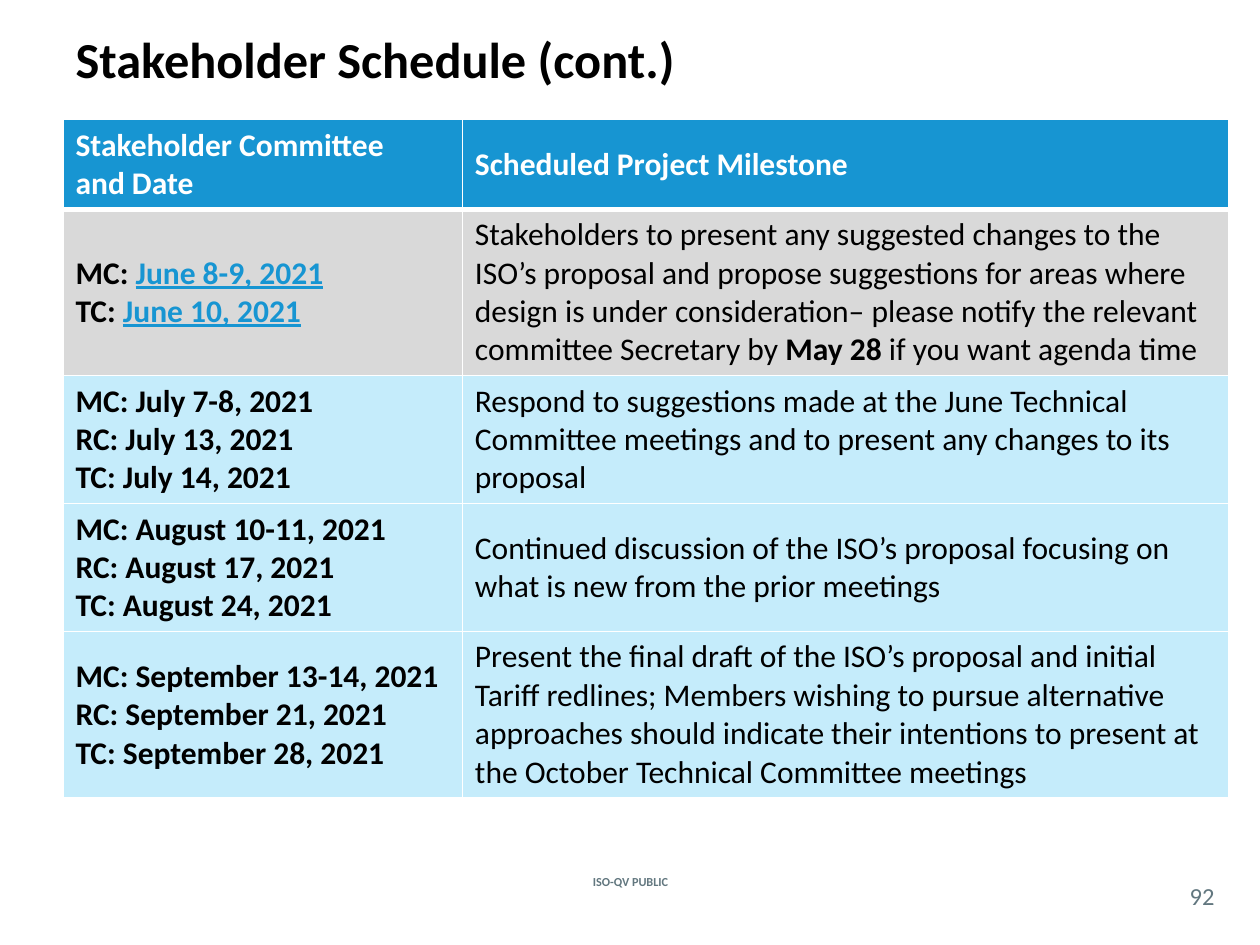
from lxml import etree
from pptx import Presentation
from pptx.dml.color import RGBColor
from pptx.enum import text as t
from pptx.oxml.ns import qn
from pptx.util import Inches, Pt

BLUE, GREY, PALE, SLATE = "1795D2", "D9D9D9", "C5ECFB", "62777F"
WHITE, BLACK = "FFFFFF", "000000"


def style(font, size, color, bold=False):
    font.name, font.size, font.bold = "Calibri", Pt(size), bold
    font.color.rgb = RGBColor.from_string(color)


def edge(cell, side, width):
    """Draw one white border; call before the cell gets its fill."""
    line = etree.SubElement(cell._tc.get_or_add_tcPr(), qn(f"a:{side}"),
                            w=str(Pt(width)))
    fill = etree.SubElement(line, qn("a:solidFill"))
    etree.SubElement(fill, qn("a:srgbClr"), val=WHITE)


deck = Presentation()
deck.slide_width, deck.slide_height = Inches(10), Inches(7.5)
slide = deck.slides.add_slide(deck.slide_layouts[5])

title = slide.shapes.title
title.left, title.top = Inches(0.5), Inches(0.17)
title.width, title.height = Inches(9), Inches(0.58)
title.text = "Stakeholder Schedule (cont.)"
title.text_frame.auto_size = t.MSO_AUTO_SIZE.NONE
title.text_frame.vertical_anchor = t.MSO_ANCHOR.MIDDLE
head = title.text_frame.paragraphs[0]
head.alignment = t.PP_ALIGN.LEFT
style(head.font, 28.8, BLACK, True)

# Text between bars is a marked run: a link in the dates, bold in the milestones
rows = [
    (0.69, BLUE, "Stakeholder Committee\nand Date", "Scheduled Project Milestone"),
    (1.28, GREY, "MC: |June 8-9, 2021|\nTC: |June 10, 2021|",
     "Stakeholders to present any suggested changes to the ISO’s proposal and "
     "propose suggestions for areas where design is under consideration– please "
     "notify the relevant committee Secretary by |May 28| if you want agenda time"),
    (0.99, PALE, "MC: July 7-8, 2021\nRC: July 13, 2021\nTC: July 14, 2021",
     "Respond to suggestions made at the June Technical Committee meetings and "
     "to present any changes to its proposal"),
    (0.99, PALE, "MC: August 10-11, 2021\nRC: August 17, 2021\nTC: August 24, 2021",
     "Continued discussion of the ISO’s proposal focusing on what is new from "
     "the prior meetings"),
    (1.28, PALE,
     "MC: September 13-14, 2021\nRC: September 21, 2021\nTC: September 28, 2021",
     "Present the final draft of the ISO’s proposal and initial Tariff redlines; "
     "Members wishing to pursue alternative approaches should indicate their "
     "intentions to present at the October Technical Committee meetings"),
]
table = slide.shapes.add_table(len(rows), 2, Inches(0.5), Inches(0.95),
                               Inches(9.25), Inches(5.23)).table
table.columns[0].width, table.columns[1].width = Inches(3.17), Inches(6.08)

for r, (height, fill, *texts) in enumerate(rows):
    table.rows[r].height = Inches(height)
    for c, words in enumerate(texts):
        cell = table.cell(r, c)
        for side in ("lnL", "lnR", "lnT", "lnB"):
            thick = (r, side) in ((0, "lnB"), (1, "lnT"))
            edge(cell, side, 3 if thick else 1)
        cell.fill.solid()
        cell.fill.fore_color.rgb = RGBColor.from_string(fill)
        cell.vertical_anchor = t.MSO_ANCHOR.MIDDLE
        frame = cell.text_frame
        for i, line in enumerate(words.split("\n")):
            para = frame.add_paragraph() if i else frame.paragraphs[0]
            for n, part in enumerate(line.split("|")):
                if not part:
                    continue
                run = para.add_run()
                run.text = part
                mark = n % 2 == 1
                link = mark and c == 0
                color = WHITE if r == 0 else BLUE if link else BLACK
                style(run.font, 18, color, r == 0 or c == 0 or mark)
                if link:
                    run.font.underline = True

footers = [
    ("ISO-QV PUBLIC", 4.27, 6.75, 1.47, 0.5, 7, True),
    ("92", 9.33, 6.96, 0.42, 0.29, 14, False),
]
for words, x, y, w, h, size, bold in footers:
    box = slide.shapes.add_textbox(Inches(x), Inches(y), Inches(w), Inches(h))
    frame = box.text_frame
    frame.word_wrap = True
    frame.vertical_anchor = t.MSO_ANCHOR.MIDDLE
    frame.margin_left = frame.margin_right = 0
    frame.margin_top = frame.margin_bottom = 0
    para = frame.paragraphs[0]
    para.text = words
    para.alignment = t.PP_ALIGN.CENTER
    style(para.font, size, SLATE, bold)

deck.save("out.pptx")
